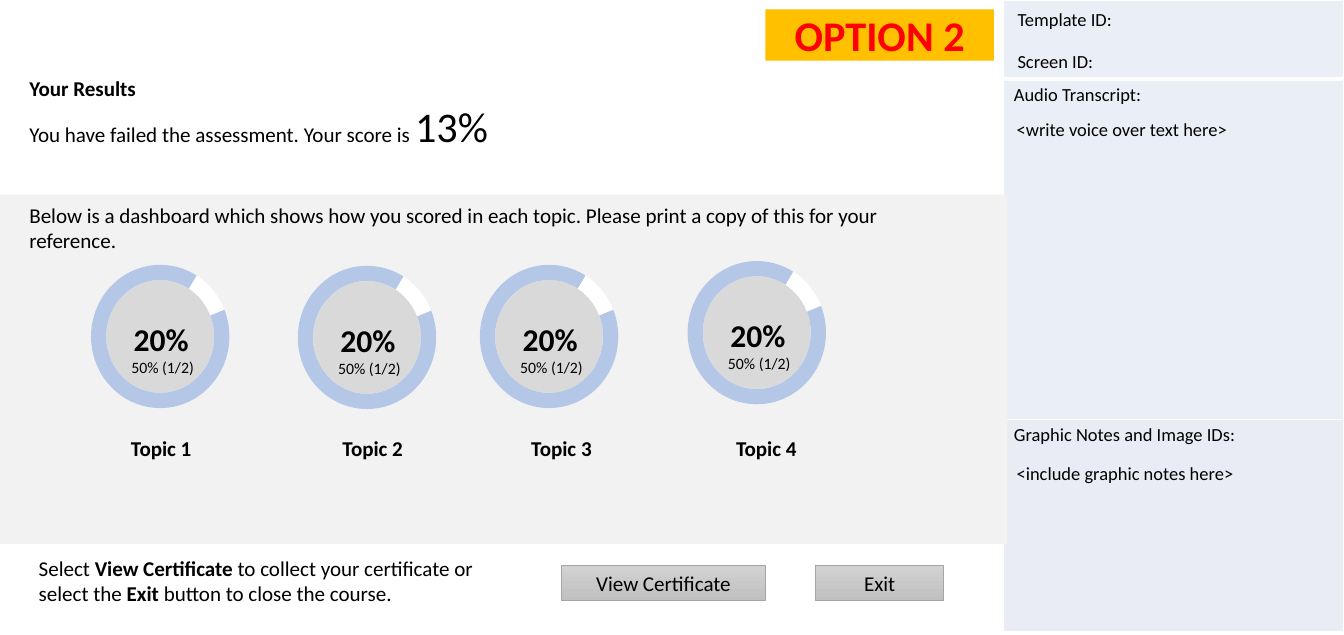
from dataclasses import dataclass

from lxml import etree
from pptx import Presentation
from pptx.dml.color import RGBColor
from pptx.enum.shapes import MSO_SHAPE
from pptx.enum.text import MSO_ANCHOR, PP_ALIGN
from pptx.oxml.ns import qn
from pptx.util import Inches, Pt

RECTANGLE = MSO_SHAPE.RECTANGLE
ROUNDED = MSO_SHAPE.ROUNDED_RECTANGLE
OVAL = MSO_SHAPE.OVAL
BLOCK_ARC = MSO_SHAPE.BLOCK_ARC
LEFT, CENTER = PP_ALIGN.LEFT, PP_ALIGN.CENTER
TOP, MIDDLE = MSO_ANCHOR.TOP, MSO_ANCHOR.MIDDLE


@dataclass(frozen=True)
class Theme:
    font: str = "Calibri"
    ink: str = "000000"
    alert: str = "FF0000"
    badge: str = "FFC000"
    panel: str = "F2F2F2"
    white: str = "FFFFFF"
    disc: str = "D9D9D9"
    ring: str = "B4C7E7"
    button_top: str = "D2D2D2"
    button_bottom: str = "C0C0C0"
    button_edge: str = "A5A5A5"
    sidebar: str = "EAEFF7"
    sidebar_notes: str = "E9EBF5"
    small: int = 12
    side: int = 14
    body: int = 16
    score: int = 24
    big: int = 32


@dataclass(frozen=True)
class Box:
    left: float
    top: float
    width: float
    height: float

    def lengths(self) -> tuple:
        return tuple(map(Inches, (self.left, self.top, self.width, self.height)))


@dataclass(frozen=True)
class Span:
    text: str
    bold: bool | None = None
    size: int | None = None


@dataclass(frozen=True)
class Line:
    spans: tuple[Span, ...]
    size: int
    bold: bool = False
    color: str = Theme.ink
    align: PP_ALIGN = LEFT
    space_before: float = 0


@dataclass(frozen=True)
class Topic:
    name: str
    name_left: float
    ring_left: float
    ring_top: float


@dataclass(frozen=True)
class SidebarRow:
    heading: str
    height: float
    fill: str
    bottom_border: int


THEME = Theme()
TOPICS = (
    Topic("Topic 1", 1.07, 0.96, 2.79),
    Topic("Topic 2", 3.3, 3.14, 2.8),
    Topic("Topic 3", 5.29, 5.06, 2.79),
    Topic("Topic 4", 7.45, 7.25, 2.75),
)
SIDEBAR = (
    SidebarRow("", 0.83, THEME.sidebar, 3),
    SidebarRow("Audio Transcript:", 3.59, THEME.sidebar, 1),
    SidebarRow("Graphic Notes and Image IDs:", 2.23, THEME.sidebar_notes, 1),
)
SIDE_LABELS = (
    ("Screen ID:", Box(10.63, 0.48, 3.5, 0.34)),
    ("Template ID:", Box(10.63, 0.04, 3.5, 0.34)),
    ("<write voice over text here>", Box(10.62, 1.19, 3.55, 0.34)),
    ("<include graphic notes here>", Box(10.62, 4.82, 3.55, 0.34)),
)
BUTTONS = (
    ("View Certificate", Box(5.92, 5.96, 2.15, 0.37)),
    ("Exit", Box(8.6, 5.96, 1.35, 0.37)),
)
RING_ARCS = ((THEME.white, 180.64), (THEME.ring, 202.44))
RING_END, RING_THICKNESS = 180.53, 0.11


def rgb(value: str) -> RGBColor:
    return RGBColor.from_string(value)


def single(text: str, size: int, **style) -> Line:
    return Line((Span(text),), size, **style)


def write(frame, *lines: Line, inset: tuple[float, float] = (0, 0), anchor=TOP) -> None:
    frame.word_wrap = True
    frame.vertical_anchor = anchor
    frame.margin_left = frame.margin_right = Inches(inset[0])
    frame.margin_top = frame.margin_bottom = Inches(inset[1])
    for index, line in enumerate(lines):
        paragraph = frame.add_paragraph() if index else frame.paragraphs[0]
        paragraph.alignment = line.align
        paragraph.space_before = Pt(line.space_before)
        font = paragraph.font
        font.name, font.size, font.bold = THEME.font, Pt(line.size), line.bold
        font.color.rgb = rgb(line.color)
        for span in line.spans:
            run = paragraph.add_run()
            run.text = span.text
            if span.bold is not None:
                run.font.bold = span.bold
            if span.size is not None:
                run.font.size = Pt(span.size)


def add_text(shapes, box: Box, *lines: Line, inset: tuple[float, float] = (0, 0)) -> None:
    write(shapes.add_textbox(*box.lengths()).text_frame, *lines, inset=inset)


def add_panel(shapes, kind: MSO_SHAPE, box: Box, fill: str):
    shape = shapes.add_shape(kind, *box.lengths())
    shape.shadow.inherit = False
    shape.fill.solid()
    shape.fill.fore_color.rgb = rgb(fill)
    shape.line.fill.background()
    return shape


def set_border(cell, side: str, width: int) -> None:
    line = etree.SubElement(cell._tc.get_or_add_tcPr(), qn(f"a:ln{side}"), w=str(Pt(width)))
    fill = etree.SubElement(line, qn("a:solidFill"))
    etree.SubElement(fill, qn("a:srgbClr"), val=THEME.white)


def add_sidebar(shapes) -> None:
    box = Box(10.58, 0, 3.59, 6.65)
    table = shapes.add_table(len(SIDEBAR), 1, *box.lengths()).table
    table.first_row = table.horz_banding = False
    for index, row in enumerate(SIDEBAR):
        table.rows[index].height = Inches(row.height)
        cell = table.cell(index, 0)
        top_border = SIDEBAR[index - 1].bottom_border if index else 1
        for side, width in zip("LRTB", (1, 1, top_border, row.bottom_border)):
            set_border(cell, side, width)
        cell.fill.solid()
        cell.fill.fore_color.rgb = rgb(row.fill)
        cell.margin_left = cell.margin_right = Inches(0.11)
        if row.heading:
            write(cell.text_frame, single(row.heading, THEME.side), inset=(0.11, 0.05))


def add_button(shapes, label: str, box: Box) -> None:
    button = add_panel(shapes, RECTANGLE, box, THEME.button_top)
    button.fill.gradient()
    button.fill.gradient_angle = 270
    for stop, color in zip(button.fill.gradient_stops, (THEME.button_top, THEME.button_bottom)):
        stop.color.rgb = rgb(color)
    button.line.color.rgb = rgb(THEME.button_edge)
    button.line.width = Pt(0.5)
    write(button.text_frame, single(label, THEME.body, align=CENTER), inset=(0, 0.05), anchor=MIDDLE)


def add_topic(shapes, topic: Topic) -> None:
    left, top = topic.ring_left, topic.ring_top
    gauge = shapes.add_group_shape().shapes
    disc = add_panel(gauge, OVAL, Box(left + 0.1, top + 0.13, 1.28, 1.3), THEME.disc)
    disc.line.color.rgb = rgb(THEME.ink)
    disc.line.width = Pt(1)
    write(disc.text_frame, single("20%", THEME.score, bold=True, align=CENTER), anchor=MIDDLE)
    for color, start in RING_ARCS:
        arc = add_panel(gauge, BLOCK_ARC, Box(left, top, 1.46, 1.51), color)
        for index, value in enumerate((start, RING_END, RING_THICKNESS)):
            arc.adjustments[index] = value
    add_text(gauge, Box(left + 0.21, top + 0.98, 1.09, 0.31), single("50% (1/2)", THEME.small, align=CENTER))
    add_text(shapes, Box(topic.name_left, 4.59, 1.26, 0.34), single(topic.name, THEME.body, bold=True, align=CENTER))


def main() -> None:
    """Build the assessment results slide and save it."""
    deck = Presentation()
    deck.slide_width, deck.slide_height = Inches(14.17), Inches(6.69)
    shapes = deck.slides.add_slide(deck.slide_layouts[6]).shapes
    add_sidebar(shapes)
    for label, box in SIDE_LABELS:
        add_text(shapes, box, single(label, THEME.side), inset=(0.1, 0.05))
    add_panel(shapes, ROUNDED, Box(0, 2.05, 10.62, 3.68), THEME.panel).adjustments[0] = 0
    score = (Span("You have failed the assessment. Your score is "), Span("13%", size=THEME.big))
    dashboard = "Below is a dashboard which shows how you scored in each topic. Please print a copy of this for your reference."
    add_text(shapes, Box(0.31, 0.79, 9.53, 1.77), single("Your Results", THEME.body, bold=True),
             Line(score, THEME.body), single(dashboard, THEME.body, space_before=39))
    closing = (Span("Select "), Span("View Certificate ", bold=True),
               Span("to collect your certificate or select the "), Span("Exit", bold=True),
               Span(" button to close the course."))
    add_text(shapes, Box(0.31, 5.8, 5.06, 0.64), Line(closing, THEME.body), inset=(0.1, 0.05))
    badge = add_panel(shapes, RECTANGLE, Box(8.07, 0.1, 2.41, 0.54), THEME.badge)
    write(badge.text_frame, single("OPTION 2", THEME.big, bold=True, color=THEME.alert, align=CENTER))
    for label, box in BUTTONS:
        add_button(shapes, label, box)
    for topic in TOPICS:
        add_topic(shapes, topic)
    deck.save("out.pptx")


if __name__ == "__main__":
    main()
